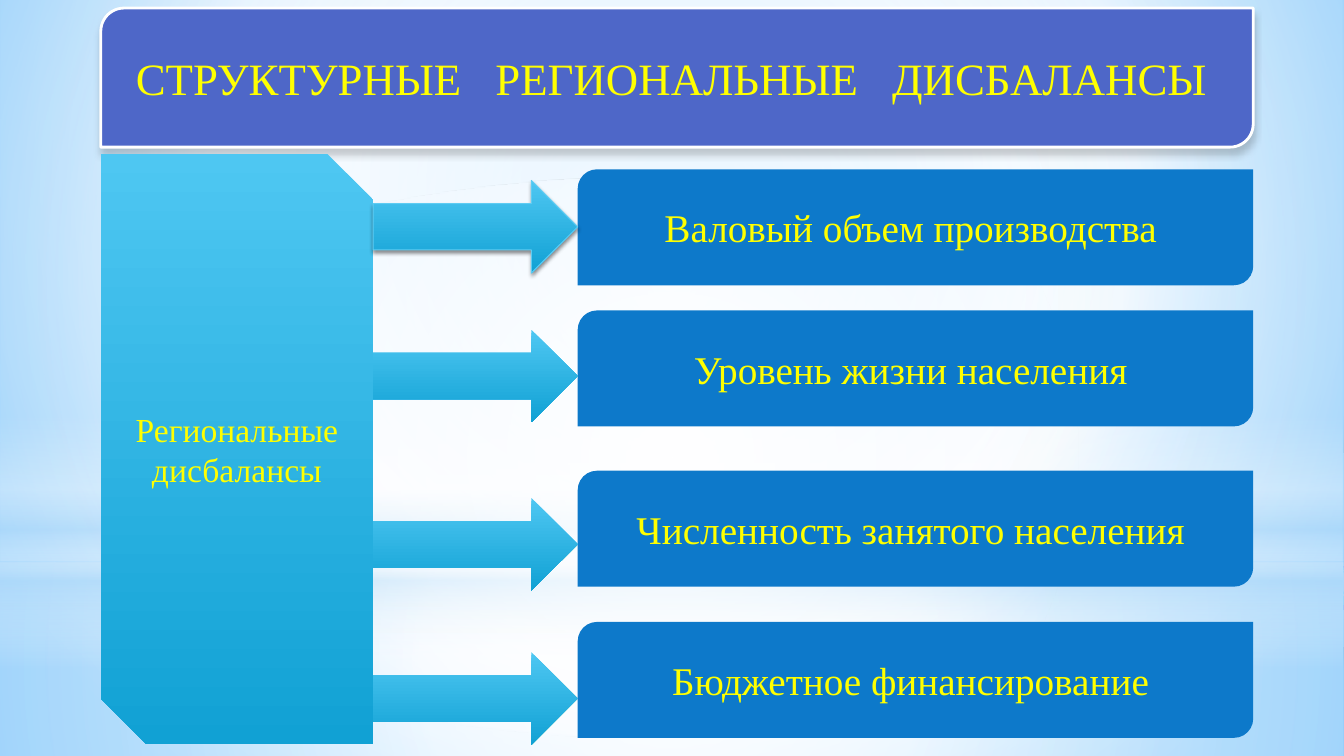
from dataclasses import dataclass
from typing import Any, Optional

import pptx
import pptx.dml.color
import pptx.enum.shapes
import pptx.enum.text
import pptx.oxml
import pptx.oxml.ns
import pptx.util

Inches = pptx.util.Inches
Preset = pptx.enum.shapes.MSO_SHAPE


@dataclass(frozen=True)
class Stop:
    position: int
    color: str
    opacity: int = 100


@dataclass(frozen=True)
class Gradient:
    stops: tuple[Stop, ...]
    angle: int = 90
    focus: Optional[tuple[int, int, int, int]] = None


@dataclass(frozen=True)
class Shadow:
    opacity: int
    blur: float
    distance: float


@dataclass(frozen=True)
class Outline:
    color: str
    width: float


@dataclass(frozen=True)
class Block:
    preset: Any
    left: float
    top: float
    width: float
    height: float
    fill: Any
    lines: tuple[str, ...] = ()
    size: int = 0
    outline: Optional[Outline] = None
    shadow: Optional[Shadow] = None


@dataclass(frozen=True)
class Row:
    text: str
    box_top: float
    arrow_top: float


@dataclass(frozen=True)
class Theme:
    font: str = "Times New Roman"
    text: str = "FFFF00"
    title_fill: str = "4E67C8"
    row_fill: str = "0D79CA"
    white: str = "FFFFFF"
    haze: str = "B4DCFA"
    arrow_edge: str = "5ECCF3"
    shadow: str = "000000"
    title_size: int = 32
    row_size: int = 28
    side_size: int = 24
    title_gap: int = 16
    cyan: Gradient = Gradient((Stop(0, "4EC7F2"), Stop(100, "11A1D4")))
    backdrop: Gradient = Gradient(
        (Stop(0, "9ED5FF"), Stop(60, "FFFFFF"), Stop(100, "5BB9FF")),
        focus=(20, 10, 20, 60),
    )


THEME = Theme()
CENTER = (50, 50, 50, 50)
SLIDE_WIDTH, SLIDE_HEIGHT = 13.33, 7.5
TITLE_WORDS = ("СТРУКТУРНЫЕ", "РЕГИОНАЛЬНЫЕ", "ДИСБАЛАНСЫ ")
ROWS = (
    Row("Валовый объем производства ", 1.68, 1.79),
    Row("Уровень жизни населения ", 3.08, 3.27),
    Row("Численность занятого населения ", 4.67, 4.94),
    Row("Бюджетное финансирование ", 6.17, 6.47),
)


def haze(*stops: tuple[int, str, int], focus: Any = CENTER) -> Gradient:
    return Gradient(tuple(Stop(*stop) for stop in stops), focus=focus)


WHITE, HAZE = THEME.white, THEME.haze
HAZE_LAYERS = (
    Block(Preset.RECTANGLE, 0, 5.58, SLIDE_WIDTH, 1.92,
          haze((0, WHITE, 91), (37, WHITE, 76), (100, HAZE, 79))),
    Block(Preset.RECTANGLE, 0, 0, SLIDE_WIDTH, 5.58,
          haze((0, WHITE, 89), (48, WHITE, 62), (100, HAZE, 79))),
    Block(Preset.RECTANGLE, 0, 4.12, SLIDE_WIDTH, 2.5,
          haze((0, WHITE, 0), (29, WHITE, 30), (45, HAZE, 40), (55, WHITE, 26),
               (65, HAZE, 60), (100, WHITE, 0), focus=None)),
    Block(Preset.OVAL, 0, 1.75, SLIDE_WIDTH, 5.58,
          haze((0, WHITE, 100), (56, WHITE, 0))),
)


def rgb(color: str) -> pptx.dml.color.RGBColor:
    return pptx.dml.color.RGBColor.from_string(color)


def color_xml(color: str, opacity: int) -> str:
    return f'<a:srgbClr val="{color}"><a:alpha val="{opacity * 1000}"/></a:srgbClr>'


def apply_gradient(owner: Any, gradient: Gradient) -> None:
    stops = "".join(
        f'<a:gs pos="{stop.position * 1000}">{color_xml(stop.color, stop.opacity)}</a:gs>'
        for stop in gradient.stops
    )
    if gradient.focus:
        sides = " ".join(
            f'{side}="{value * 1000}"' for side, value in zip("ltrb", gradient.focus)
        )
        direction = f'<a:path path="circle"><a:fillToRect {sides}/></a:path>'
    else:
        direction = f'<a:lin ang="{gradient.angle * 60000}" scaled="0"/>'
    namespace = pptx.oxml.ns.nsdecls("a")
    element = pptx.oxml.parse_xml(
        f'<a:gradFill {namespace} rotWithShape="1"><a:gsLst>{stops}</a:gsLst>{direction}</a:gradFill>'
    )
    solid = owner.find(".//" + pptx.oxml.ns.qn("a:solidFill"))
    solid.getparent().replace(solid, element)


def apply_shadow(shape: Any, shadow: Shadow) -> None:
    effects = shape.element.find(".//" + pptx.oxml.ns.qn("a:effectLst"))
    blur, distance = pptx.util.Pt(shadow.blur), pptx.util.Pt(shadow.distance)
    effects.append(pptx.oxml.parse_xml(
        f'<a:outerShdw {pptx.oxml.ns.nsdecls("a")} blurRad="{blur}" dist="{distance}" '
        f'dir="5400000" rotWithShape="0">{color_xml(THEME.shadow, shadow.opacity)}</a:outerShdw>'
    ))


def add_run(paragraph: Any, text: str, size: int) -> Any:
    run = paragraph.add_run()
    run.text = text
    font_format = {"name": THEME.font, "size": pptx.util.Pt(size)}
    for name, value in font_format.items():
        setattr(run.font, name, value)
    run.font.color.rgb = rgb(THEME.text)
    return run


def add_block(slide: Any, block: Block) -> Any:
    bounds = (block.left, block.top, block.width, block.height)
    shape = slide.shapes.add_shape(block.preset, *map(Inches, bounds))
    shape.shadow.inherit = False
    shape.fill.solid()
    if isinstance(block.fill, Gradient):
        apply_gradient(shape.element, block.fill)
    else:
        shape.fill.fore_color.rgb = rgb(block.fill)
    if block.outline:
        shape.line.color.rgb = rgb(block.outline.color)
        shape.line.width = pptx.util.Pt(block.outline.width)
    else:
        shape.line.fill.background()
    if block.shadow:
        apply_shadow(shape, block.shadow)
    frame_format = {"word_wrap": True, "vertical_anchor": pptx.enum.text.MSO_ANCHOR.MIDDLE}
    for name, value in frame_format.items():
        setattr(shape.text_frame, name, value)
    for index, line in enumerate(block.lines):
        paragraph = shape.text_frame.add_paragraph() if index else shape.text_frame.paragraphs[0]
        paragraph.alignment = pptx.enum.text.PP_ALIGN.CENTER
        add_run(paragraph, line, block.size)
    return shape


def add_title(slide: Any) -> None:
    title = add_block(slide, Block(
        Preset.ROUND_2_DIAG_RECTANGLE, 1, 0.08, 11.43, 1.38, THEME.title_fill,
        TITLE_WORDS[:1], THEME.title_size, Outline(WHITE, 2), Shadow(20, 5, 4)))
    paragraph = title.text_frame.paragraphs[0]
    for word in TITLE_WORDS[1:]:
        gap = add_run(paragraph, " ", THEME.title_size)
        gap._r.get_or_add_rPr().set("spc", str(THEME.title_gap * 100))
        add_run(paragraph, word, THEME.title_size)


def main() -> None:
    presentation = pptx.Presentation()
    presentation.slide_width = Inches(SLIDE_WIDTH)
    presentation.slide_height = Inches(SLIDE_HEIGHT)
    slide = presentation.slides.add_slide(presentation.slide_layouts[6])
    slide.background.fill.solid()
    apply_gradient(slide.element, THEME.backdrop)
    for layer in HAZE_LAYERS:
        add_block(slide, layer)
    add_title(slide)
    add_block(slide, Block(Preset.SNIP_2_DIAG_RECTANGLE, 1, 1.53, 2.7, 5.85, THEME.cyan,
                           ("Региональные ", "дисбалансы"), THEME.side_size))
    for row in ROWS:
        add_block(slide, Block(Preset.ROUND_2_DIAG_RECTANGLE, 5.73, row.box_top, 6.7, 1.15,
                               THEME.row_fill, (row.text,), THEME.row_size))
    for index, row in enumerate(ROWS):
        raised = index == 0
        add_block(slide, Block(Preset.RIGHT_ARROW, 3.7, row.arrow_top, 2.03, 0.92, THEME.cyan,
                               outline=Outline(THEME.arrow_edge, 0.75) if raised else None,
                               shadow=Shadow(45, 3.1, 1.8) if raised else None))
    presentation.save("out.pptx")


if __name__ == "__main__":
    main()
